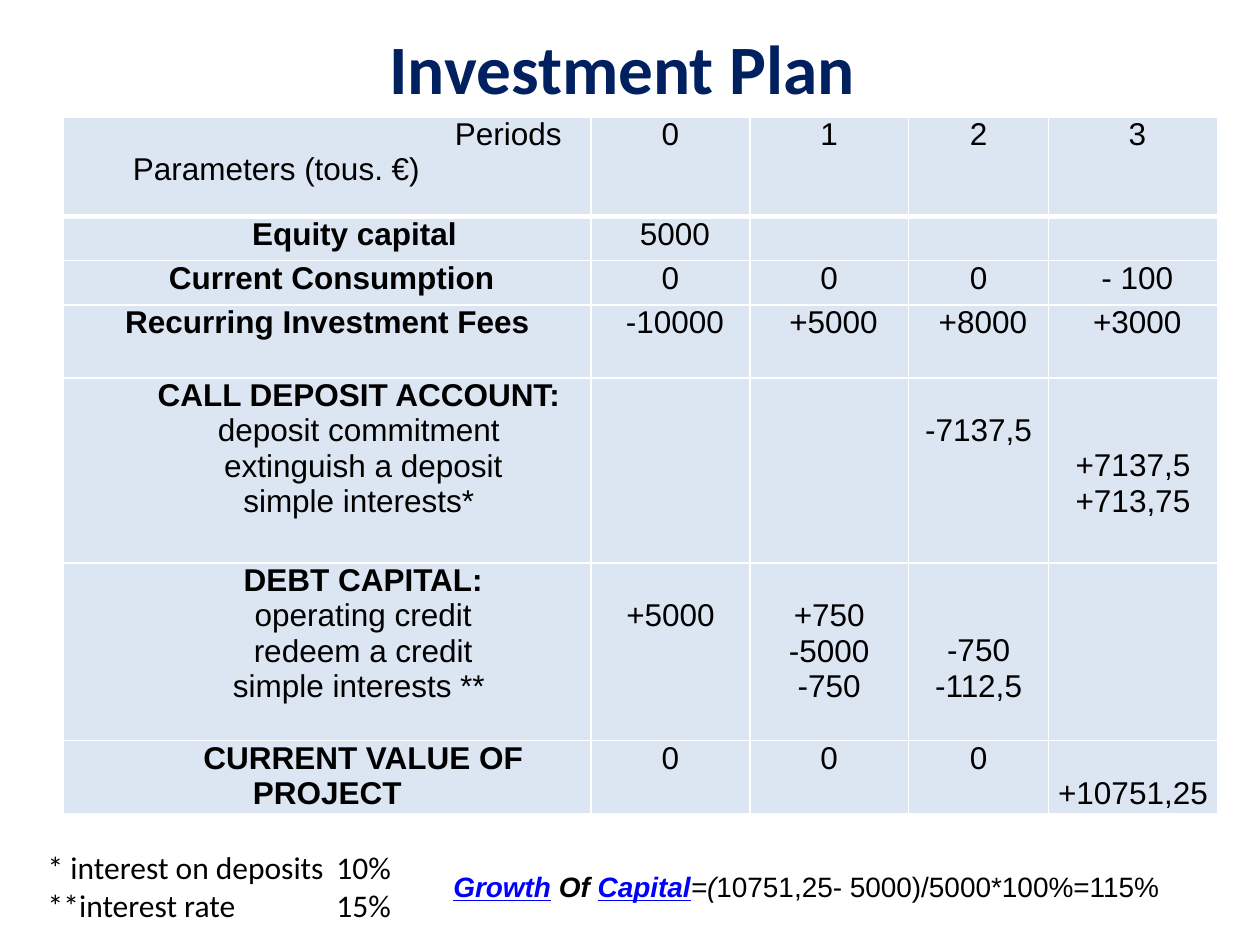
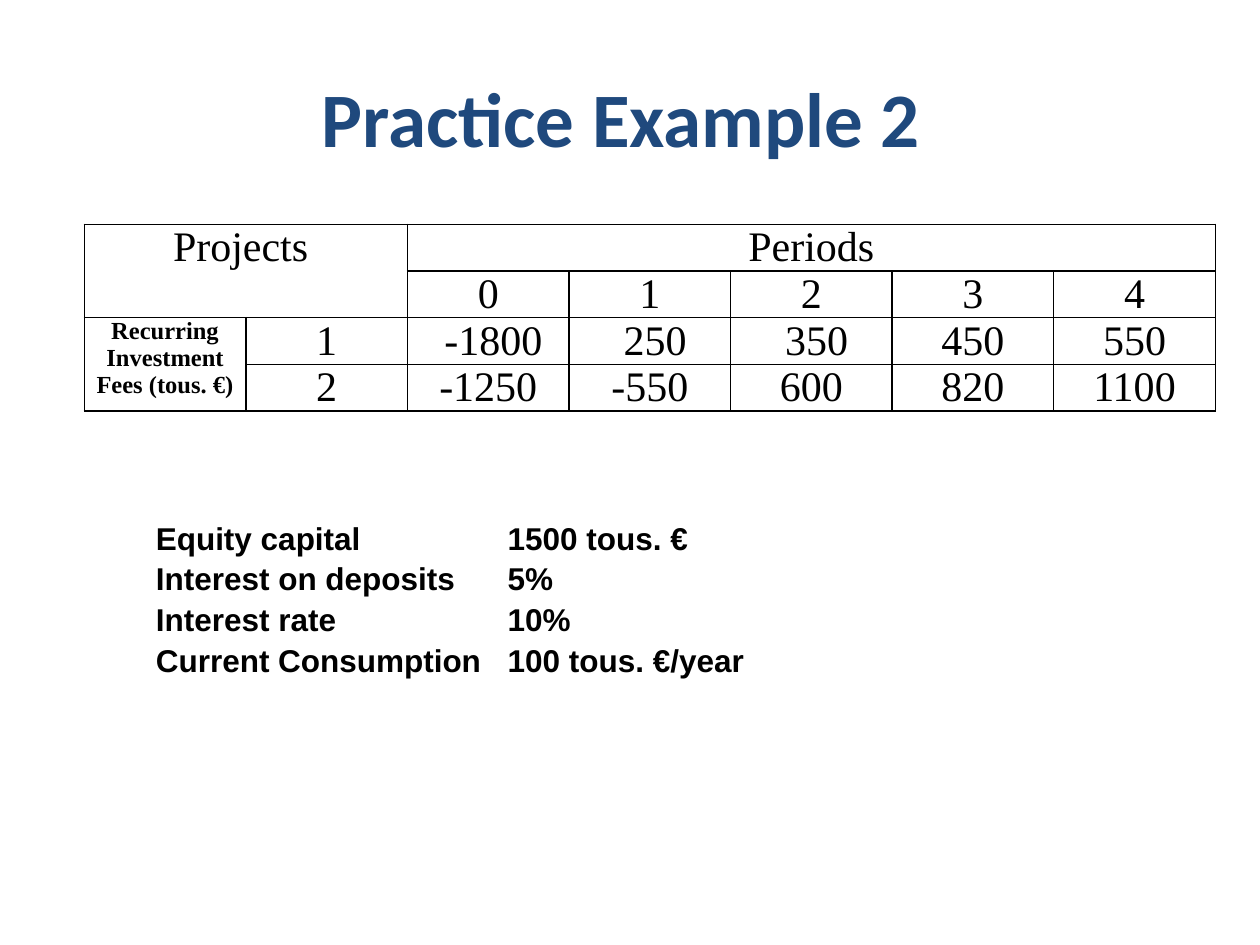
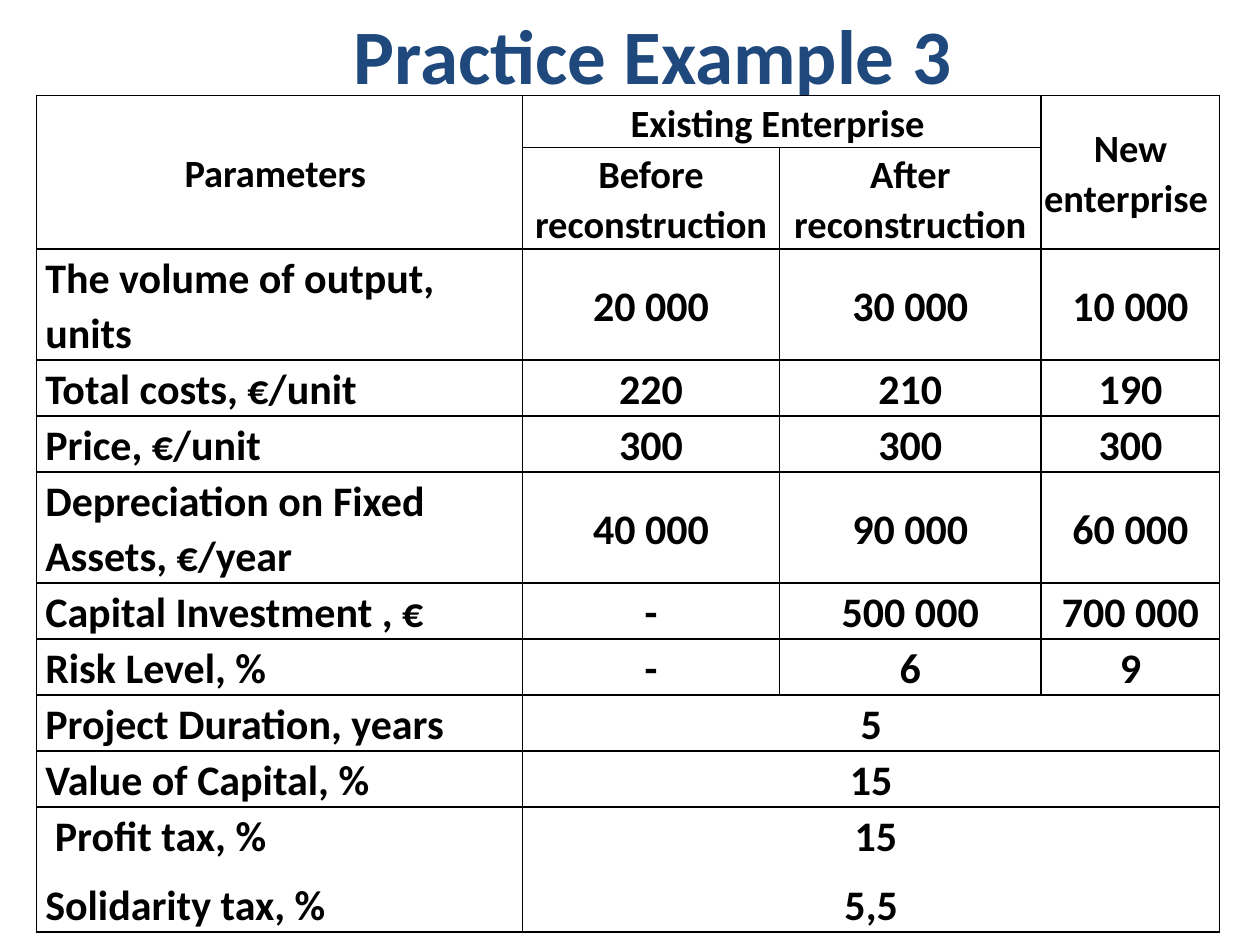
import pptx
import pptx.dml.color
import pptx.enum.text
import pptx.oxml
import pptx.oxml.ns
import pptx.util

Pt = pptx.util.Pt
ALIGN = pptx.enum.text.PP_ALIGN
ANCHOR = pptx.enum.text.MSO_ANCHOR
AUTO_SIZE = pptx.enum.text.MSO_AUTO_SIZE

COLORS = {
    "text": "000000",
    "navy": "002060",
    "blue": "1F497D",
    "link": "0000FF",
    "pale": "DCE6F2",
    "white": "FFFFFF",
}
SANS, SERIF, HEADING = "Arial", "Times New Roman", "Calibri"
TITLE_ONLY = 5
PLAN_LINE = 20.1  # height of one 18 pt line in the plan


def rgb(color):
    return pptx.dml.color.RGBColor.from_string(COLORS[color])


def add_run(paragraph, text, font, size, color="text", bold=False, italic=False, underline=False):
    run = paragraph.add_run()
    run.text = text
    run.font.name, run.font.size = font, Pt(size)
    run.font.bold, run.font.italic, run.font.underline = bold, italic, underline
    run.font.color.rgb = rgb(color)


def each_paragraph(frame, lines):
    """Yield a paragraph of the frame for every line, with the line."""
    for index, line in enumerate(lines):
        yield (frame.add_paragraph() if index else frame.paragraphs[0]), line


def set_indent(paragraph, left=0, first=0):
    properties = paragraph._p.get_or_add_pPr()
    properties.set("marL", str(Pt(left)))
    properties.set("indent", str(Pt(first)))


def add_titled_slide(deck, text, box, size=44, color="blue"):
    slide = deck.slides.add_slide(deck.slide_layouts[TITLE_ONLY])
    title = slide.shapes.title
    title.left, title.top, title.width, title.height = map(Pt, box)
    frame = title.text_frame
    frame.auto_size = AUTO_SIZE.NONE
    frame.vertical_anchor = ANCHOR.MIDDLE
    frame.paragraphs[0].alignment = ALIGN.CENTER
    add_run(frame.paragraphs[0], text, HEADING, size, color, bold=True)
    return slide


def add_text_frame(slide, box, wrap=True):
    frame = slide.shapes.add_textbox(*map(Pt, box)).text_frame
    frame.word_wrap = wrap
    frame.auto_size = AUTO_SIZE.SHAPE_TO_FIT_TEXT
    return frame


def add_tabbed_list(slide, box, lines, tab, font, bold=False, wrap=True, gap=0):
    """Place 18 pt lines of a term and a value, the values at one tab stop."""
    frame = add_text_frame(slide, box, wrap)
    for paragraph, line in each_paragraph(frame, lines):
        paragraph.space_after = Pt(gap)
        paragraph._p.get_or_add_pPr().append(pptx.oxml.parse_xml(
            f'<a:tabLst {pptx.oxml.ns.nsdecls("a")}>'
            f'<a:tab pos="{Pt(tab)}" algn="l"/></a:tabLst>'))
        add_run(paragraph, "\t".join(line), font, 18, bold=bold)


def set_borders(cell, color, **widths):
    """Draw all four sides 1 pt wide, or as given by L, R, T and B."""
    for index, side in enumerate("LRTB"):
        cell._tc.get_or_add_tcPr().insert(index, pptx.oxml.parse_xml(
            f'<a:ln{side} {pptx.oxml.ns.nsdecls("a")} w="{Pt(widths.get(side, 1))}">'
            f'<a:solidFill><a:srgbClr val="{COLORS[color]}"/></a:solidFill></a:ln{side}>'))


def add_grid(slide, left, top, widths, heights, fill, line, thick_below_header=False):
    table = slide.shapes.add_table(
        len(heights), len(widths), Pt(left), Pt(top), Pt(sum(widths)), Pt(sum(heights))).table
    table.first_row = table.horz_banding = False
    for column, width in zip(table.columns, widths):
        column.width = Pt(width)
    for number, (row, height) in enumerate(zip(table.rows, heights)):
        row.height = Pt(height)
        header_edge = {0: {"B": 3}, 1: {"T": 3}}.get(number, {}) if thick_below_header else {}
        for cell in row.cells:
            cell.margin_top = cell.margin_bottom = 0
            cell.fill.solid()
            cell.fill.fore_color.rgb = rgb(fill)
            set_borders(cell, line, **header_edge)
    return table


def write_cell(cell, lines, font, size, inset, bold=False, align=ALIGN.CENTER, anchor=ANCHOR.TOP):
    cell.margin_left = cell.margin_right = Pt(inset)
    cell.vertical_anchor = anchor
    for paragraph, line in each_paragraph(cell.text_frame, lines):
        paragraph.alignment = align
        add_run(paragraph, line, font, size, bold=bold)


def add_plan_table(slide, left, top):
    rows = [
        ("Equity capital ", " 5000", "", "", ""),
        (" Current Consumption", "0", "0", "0", " - 100"),
        (" Recurring Investment Fees ", " -10000", " +5000", " +8000", " +3000"),
        ("CALL DEPOSIT ACCOUNT:\ndeposit commitment\n extinguish a deposit\n simple interests* ",
         "", "", "\n-7137,5", "\n\n+7137,5\n+713,75"),
        (" DEBT CAPITAL:\n operating credit\n redeem a credit\nsimple interests **",
         "\n+5000", "\n+750\n-5000\n-750", "\n\n-750\n-112,5", ""),
        (" CURRENT VALUE OF PROJECT", "0", "0", "0", "\n+10751,25"),
    ]
    unindented = (" Current Consumption", " Recurring Investment Fees ")
    table = add_grid(slide, left, top, [301.5, 90.7, 90.7, 80, 96.5],
                     [56.9, 25.2, 25.2, 41.8, 105.8, 101.5, 41.8],
                     "pale", "white", thick_below_header=True)

    corner = table.cell(0, 0)
    write_cell(corner, ["Periods ", "Parameters (tous. €)"], SANS, 18, 3.6, align=ALIGN.LEFT)
    for paragraph, indent in zip(corner.text_frame.paragraphs, (220, 36)):
        set_indent(paragraph, left=indent)
    for column, period in enumerate(("0", "1", "2", " 3"), 1):
        write_cell(table.cell(0, column), [period], SANS, 18, 3.6)

    for number, (label, *amounts) in enumerate(rows, 1):
        label_cell = table.cell(number, 0)
        write_cell(label_cell, label.split("\n"), SANS, 18, 3.6)
        label_cell.text_frame.paragraphs[0].runs[0].font.bold = True
        if label not in unindented:
            for paragraph in label_cell.text_frame.paragraphs:
                set_indent(paragraph, first=36)
        for column, amount in enumerate(amounts, 1):
            if amount:
                cell, shown = table.cell(number, column), amount.lstrip("\n")
                write_cell(cell, shown.split("\n"), SANS, 18, 3.6)
                cell.margin_top = Pt(PLAN_LINE * (len(amount) - len(shown)))


def add_growth_formula(slide, box):
    paragraph = add_text_frame(slide, box).paragraphs[0]
    for text, color, bold, italic in [
        ("Growth", "link", True, True),
        (" Of ", "text", True, True),
        ("Capital", "link", True, True),
        ("=(", "text", False, True),
        ("10751,25- 5000)/5000*100%=115%", "text", False, False),
    ]:
        add_run(paragraph, text, SANS, 16, color, bold, italic, underline=color == "link")


def add_projects_table(slide, left, top):
    table = add_grid(slide, left, top, [92.35] * 7, [26.7] * 4, "white", "text")
    for first, last in [((0, 0), (1, 1)), ((0, 2), (0, 6)), ((2, 0), (3, 0))]:
        table.cell(*first).merge(table.cell(*last))
    write_cell(table.cell(0, 0), ["Projects "], SERIF, 24, 5)
    write_cell(table.cell(0, 2), [" Periods "], SERIF, 24, 5)
    write_cell(table.cell(2, 0), ["Recurring Investment Fees (tous. €)"], SERIF, 14, 5, bold=True)
    for column in range(5):
        write_cell(table.cell(1, column + 2), [str(column)], SERIF, 24, 5)
    fees = [
        ("1", " -1800", " 250", " 350", "450", "550"),
        ("2", "-1250", "-550", "600", "820", "1100"),
    ]
    for number, project in enumerate(fees, 2):
        for column, value in enumerate(project, 1):
            write_cell(table.cell(number, column), [value], SERIF, 24, 5)


def add_enterprise_table(slide, left, top):
    single, double = 32, 63.4
    table = add_grid(slide, left, top, [277.8, 146.7, 149.6, 102],
                     [29.6, 57.7, double, single, single, double] + [single] * 4 + [71.4],
                     "white", "text")
    for first, last in [((0, 0), (1, 0)), ((0, 1), (0, 2)), ((0, 3), (1, 3))]:
        table.cell(*first).merge(table.cell(*last))

    def write(row, column, text, size=24, align=ALIGN.CENTER, anchor=ANCHOR.MIDDLE):
        cell = table.cell(row, column)
        write_cell(cell, text.split("\n"), HEADING, size, 0.7 if column == 3 else 5,
                   True, align, anchor)
        cell.margin_top = Pt(0.7)
        for paragraph in cell.text_frame.paragraphs:
            paragraph.line_spacing, paragraph.space_after = 1.07, Pt(8)

    headings = [
        (0, 0, "Parameters "),
        (0, 1, "Existing Enterprise "),
        (0, 3, "New enterprise "),
        (1, 1, "Before reconstruction "),
        (1, 2, "After reconstruction"),
    ]
    for row, column, heading in headings:
        write(row, column, heading, size=22)

    parameters = [
        ("The volume of output, units", "20 000", "30 000", "10 000"),
        ("Total costs, €/unit", "220", "210", "190"),
        ("Price, €/unit", "300", "300", "300"),
        ("Depreciation on Fixed Assets, €/year", "40 000", "90 000", "60 000"),
        ("Capital Investment , €", "-", "500 000", "700 000"),
        ("Risk Level, %", "-", "6", "9"),
        ("Project Duration, years", "5"),
        ("Value of Capital, %", "15"),
        (" Profit tax, %\nSolidarity tax, %", " 15\n5,5"),
    ]
    for row, (label, *values) in enumerate(parameters, 2):
        write(row, 0, label, align=ALIGN.LEFT, anchor=ANCHOR.TOP)
        shared = len(values) == 1
        if shared:
            table.cell(row, 1).merge(table.cell(row, 3))
        for column, value in enumerate(values, 1):
            write(row, column, value, anchor=ANCHOR.BOTTOM if shared else ANCHOR.MIDDLE)


def main():
    deck = pptx.Presentation()
    deck.slide_width, deck.slide_height = Pt(720), Pt(540)

    plan = add_titled_slide(deck, "Investment Plan ", (36, 21.6, 648, 33.1), 39.6, "navy")
    add_plan_table(plan, 36.3, 66.9)
    add_tabbed_list(plan, (20.2, 481, 221, 51.1),
                    [("* interest on deposits", "10%"), ("**interest rate", "15%")],
                    165, HEADING, wrap=False)
    add_growth_formula(plan, (252, 493.2, 459.4, 26.6))

    projects = add_titled_slide(deck, "Practice Example 2 ", (36, 21.6, 648, 90))
    add_projects_table(projects, 48.2, 128.2)
    add_tabbed_list(projects, (82, 293, 584, 94),
                    [("Equity capital", "1500 tous. €"), ("Interest on deposits", "5%"),
                     ("Interest rate", "10%"), ("Current Consumption", "100 tous. €/year")],
                    201, SANS, bold=True, gap=1.6)

    enterprises = add_titled_slide(deck, "Practice Example 3", (49, -1.4, 648, 64))
    add_enterprise_table(enterprises, 20.9, 54.7)

    deck.save("out.pptx")


if __name__ == "__main__":
    main()
